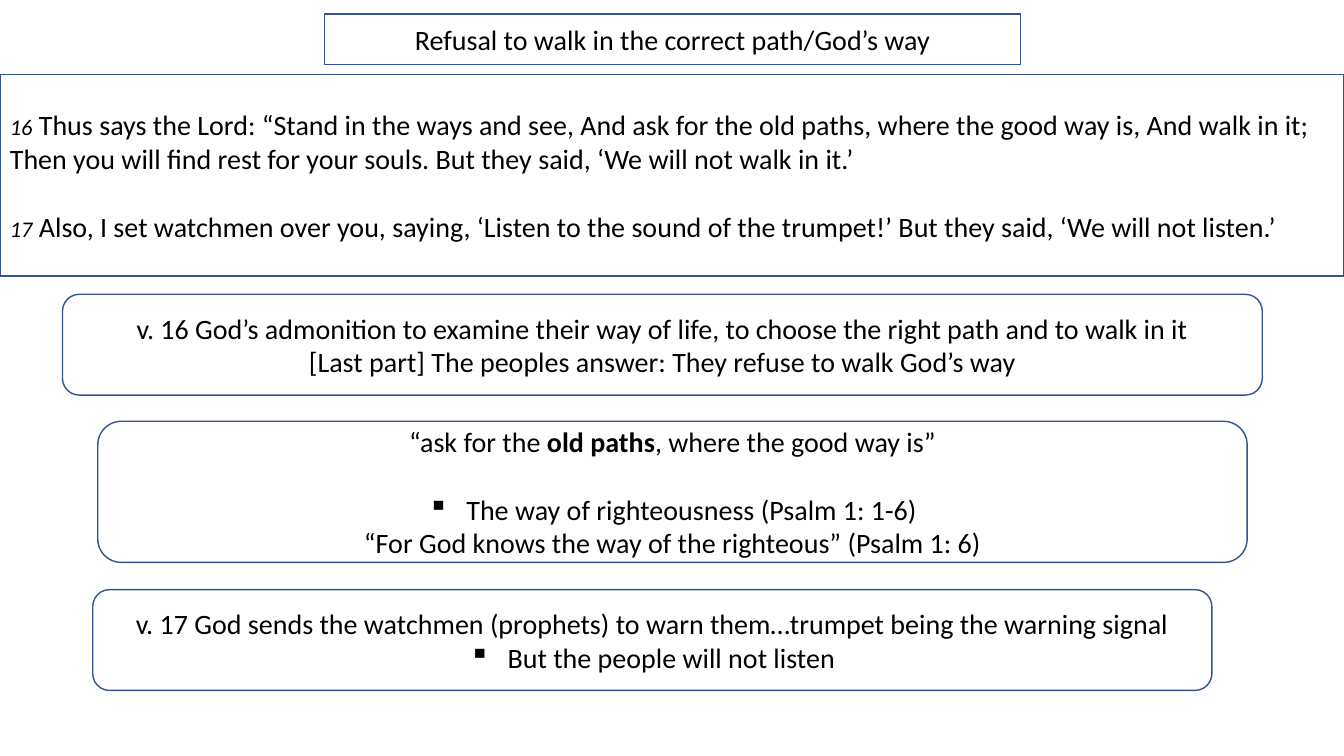
from lxml.etree import SubElement
from pptx import Presentation
from pptx.dml.color import RGBColor
from pptx.enum.shapes import MSO_SHAPE
from pptx.enum.text import MSO_ANCHOR, MSO_AUTO_SIZE, PP_ALIGN
from pptx.oxml.ns import qn
from pptx.util import Inches, Pt

COLORS = {"fill": "FFFFFF", "outline": "325491", "text": "000000"}
BLANK_LINE = Pt(24.4)


def style_box(shape):
    shape.shadow.inherit = False
    shape.fill.solid()
    shape.fill.fore_color.rgb = RGBColor.from_string(COLORS["fill"])
    shape.line.color.rgb = RGBColor.from_string(COLORS["outline"])
    shape.line.width = Pt(1)
    text_frame = shape.text_frame
    text_frame.word_wrap = True
    text_frame.auto_size = MSO_AUTO_SIZE.NONE
    text_frame.vertical_anchor = MSO_ANCHOR.MIDDLE
    text_frame.margin_left = text_frame.margin_right = Inches(0.1)
    text_frame.margin_top = text_frame.margin_bottom = Inches(0.05)


def write_paragraph(paragraph, pieces, alignment, gap=False, bullet=False):
    """Write (text, style) pieces; style is "", "bold" or "verse"."""
    paragraph.alignment = alignment
    if gap:
        paragraph.space_before = BLANK_LINE
    if bullet:
        properties = paragraph._p.get_or_add_pPr()
        properties.set("marL", str(Inches(0.38)))
        properties.set("indent", str(Inches(-0.38)))
        SubElement(properties, qn("a:buChar")).set("char", "▪")
    for text, style in pieces:
        run = paragraph.add_run()
        run.text = text
        run.font.name = "Calibri"
        run.font.size = Pt(16 if style == "verse" else 20)
        run.font.italic = style == "verse"
        run.font.bold = style == "bold"
        run.font.color.rgb = RGBColor.from_string(COLORS["text"])


presentation = Presentation()
presentation.slide_width = Inches(13.33)
presentation.slide_height = Inches(7.5)
slide = presentation.slides.add_slide(presentation.slide_layouts[5])

# Title in a rounded frame
title = slide.shapes.title
title.left, title.top = Inches(3.22), Inches(0.14)
title.width, title.height = Inches(6.9), Inches(0.5)
geometry = SubElement(title._element.spPr, qn("a:prstGeom"))
geometry.set("prst", "roundRect")
SubElement(geometry, qn("a:avLst"))
style_box(title)
write_paragraph(title.text_frame.paragraphs[0],
                [("Refusal to walk in the correct path/God’s way", "")], PP_ALIGN.CENTER)

# Scripture and comment boxes: shape, position and size, alignment,
# then paragraphs as (pieces, blank line above, bullet)
boxes = [
    (MSO_SHAPE.RECTANGLE, (0, 0.74, 13.33, 2), PP_ALIGN.LEFT, [
        ([("16", "verse"),
          (" Thus says the Lord: “Stand in the ways and see, And ask for the old paths, "
           "where the good way is, And walk in it; Then you will find rest for your souls. "
           "But they said, ‘We will not walk in it.’", "")], False, False),
        ([("17", "verse"),
          (" Also, I set watchmen over you, saying, ‘Listen to the sound of the trumpet!’ "
           "But they said, ‘We will not listen.’", "")], True, False),
    ]),
    (MSO_SHAPE.ROUNDED_RECTANGLE, (0.62, 2.92, 11.9, 1), PP_ALIGN.CENTER, [
        ([("v. 16 God’s admonition to examine their way of life, to choose the right path "
           "and to walk in it", "")], False, False),
        ([("[Last part] The peoples answer: They refuse to walk God’s way", "")], False, False),
    ]),
    (MSO_SHAPE.ROUNDED_RECTANGLE, (0.97, 4.18, 11.4, 1.4), PP_ALIGN.CENTER, [
        ([("“ask for the ", ""), ("old paths", "bold"),
          (", where the good way is”", "")], False, False),
        ([("The way of righteousness (Psalm 1: 1-6)", "")], True, True),
        ([("“For God knows the way of the righteous” (Psalm 1: 6)", "")], False, False),
    ]),
    (MSO_SHAPE.ROUNDED_RECTANGLE, (0.92, 5.85, 11.1, 1), PP_ALIGN.CENTER, [
        ([("v. 17 God sends the watchmen (prophets) to warn them…trumpet being the "
           "warning signal", "")], False, False),
        ([("But the people will not listen", "")], False, True),
    ]),
]
for shape_type, position, alignment, paragraphs in boxes:
    shape = slide.shapes.add_shape(shape_type, *[Inches(length) for length in position])
    style_box(shape)
    text_frame = shape.text_frame
    for index, (pieces, gap, bullet) in enumerate(paragraphs):
        paragraph = text_frame.add_paragraph() if index else text_frame.paragraphs[0]
        write_paragraph(paragraph, pieces, alignment, gap, bullet)

presentation.save("out.pptx")
